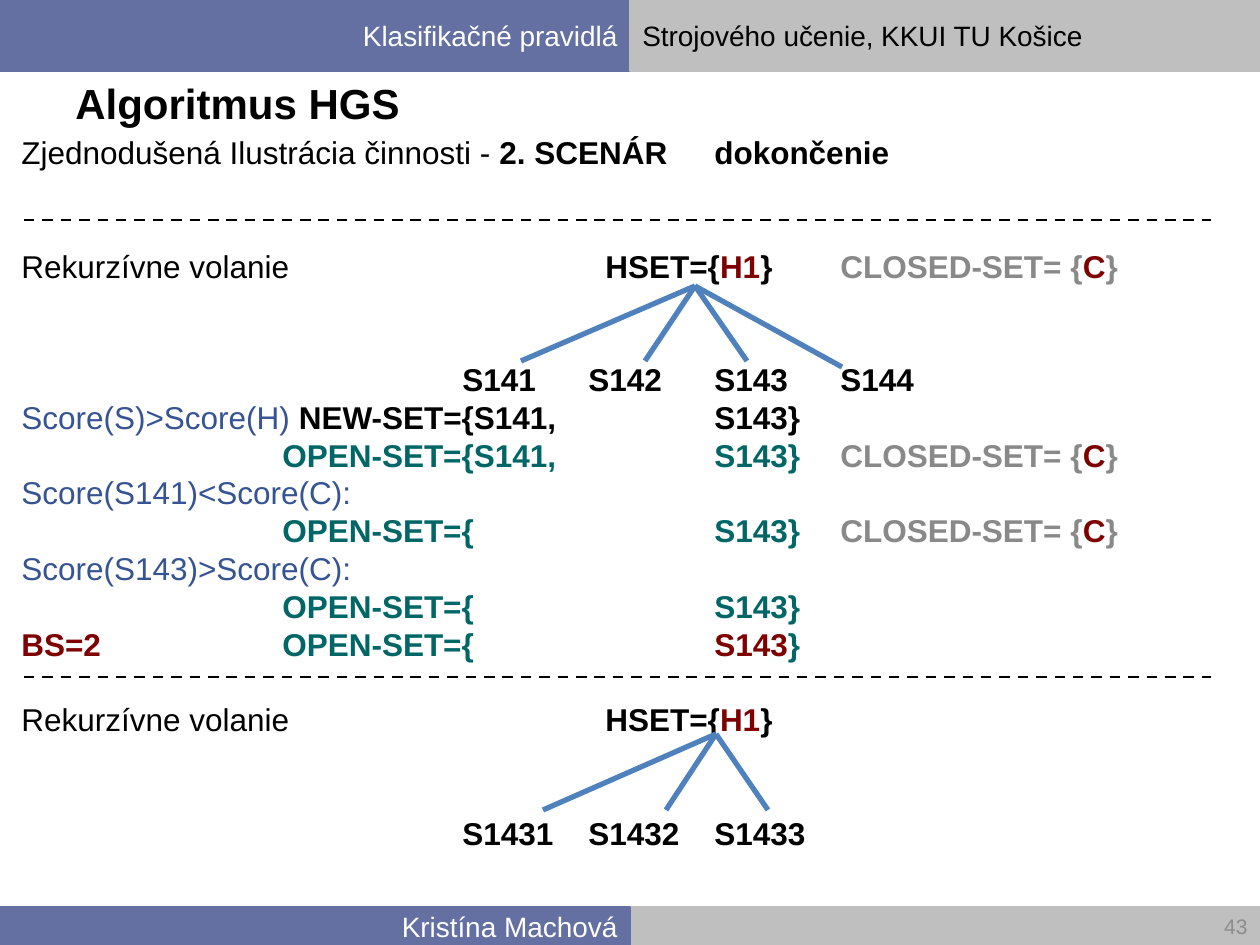
from lxml import etree
from pptx import Presentation
from pptx.dml.color import RGBColor
from pptx.enum.dml import MSO_LINE
from pptx.enum.shapes import MSO_CONNECTOR, MSO_SHAPE
from pptx.enum.text import MSO_ANCHOR, PP_ALIGN
from pptx.oxml.ns import qn
from pptx.util import Emu, Pt

LEFT, RIGHT = PP_ALIGN.LEFT, PP_ALIGN.RIGHT
TOP, MIDDLE = MSO_ANCHOR.TOP, MSO_ANCHOR.MIDDLE
RECTANGLE, STRAIGHT, DASH = MSO_SHAPE.RECTANGLE, MSO_CONNECTOR.STRAIGHT, MSO_LINE.DASH

WIDTH, HEIGHT = 1260, 945
EMU_PER_PX = 914400 / 126
FONT = "Arial"
LINE_PITCH = 21.6  # points
BLACK, WHITE, GRAY, PAGE_GRAY = "000000", "FFFFFF", "898989", "8C8C8C"
INDIGO, SILVER, EDGE_BLUE = "6570A2", "BFBFBF", "4F81BD"
RED, TEAL, SCORE_BLUE = "7E0000", "006666", "365394"

# left, top, width, height, fill, text, text colour, alignment
BARS = [
    (630, 907, 630, 38, SILVER, "", BLACK, LEFT),
    (0, 0, 630, 71, INDIGO, "Klasifikačné pravidlá", WHITE, RIGHT),
    (630, 0, 630, 71, SILVER, "Strojového učenie, KKUI TU Košice", BLACK, LEFT),
    (0, 907, 630, 38, INDIGO, "Kristína Machová", WHITE, RIGHT),
]

# Tab stops in px from the left edge of the text
SET_STOP, HSET_STOP = 261, 584
S1_STOP, S2_STOP, S3_STOP, S4_STOP = range(441, 820, 126)
SET_STOPS = [SET_STOP, S3_STOP, S4_STOP]
HSET_STOPS = [HSET_STOP, S4_STOP]
CHILD_STOPS = [S1_STOP, S2_STOP, S3_STOP, S4_STOP]

# Runs: text, colour, bold
CLOSED_SET = [("\tCLOSED-SET= {", GRAY, True), ("C", RED, True), ("}", GRAY, True)]
RECURSIVE_CALL = [("Rekurzívne volanie", BLACK, False), ("\tHSET={", BLACK, True),
                  ("H1", RED, True), ("}", BLACK, True)]
OPEN_SET = [("\tOPEN-SET={\tS143}", TEAL, True)]

# Rows: free lines above, tab stops, runs
ROWS = [
    (0, [S3_STOP], [("Zjednodušená Ilustrácia činnosti - ", BLACK, False),
                    ("2. SCENÁR\tdokončenie", BLACK, True)]),
    (2, HSET_STOPS, RECURSIVE_CALL + CLOSED_SET),
    (2, CHILD_STOPS, [("\tS141\tS142\tS143\tS144", BLACK, True)]),
    (0, [S3_STOP], [("Score(S)>Score(H) ", SCORE_BLUE, False),
                    ("NEW-SET={S141,\tS143}", BLACK, True)]),
    (0, SET_STOPS, [("\tOPEN-SET={S141,\tS143}", TEAL, True)] + CLOSED_SET),
    (0, [], [("Score(S141)<Score(C):", SCORE_BLUE, False)]),
    (0, SET_STOPS, OPEN_SET + CLOSED_SET),
    (0, [], [("Score(S143)>Score(C):", SCORE_BLUE, False)]),
    (0, SET_STOPS, OPEN_SET),
    (0, SET_STOPS, [("BS=2", RED, True), ("\tOPEN-SET={\t", TEAL, True),
                    ("S143", RED, True), ("}", TEAL, True)]),
    (1, HSET_STOPS, RECURSIVE_CALL),
    (2, CHILD_STOPS, [("\tS1431\tS1432\tS1433", BLACK, True)]),
]

DIVIDER_TOPS = [220, 677]
DIVIDER_LEFT, DIVIDER_RIGHT = 24, 1211
# Parent point and its child points
TREES = [
    ((695, 286), [(521, 361), (645, 361), (747, 361), (842, 367)]),
    ((716, 734), [(543, 810), (666, 810), (768, 810)]),
]


def px(value):
    return Emu(round(value * EMU_PER_PX))


def rgb(color):
    return RGBColor.from_string(color)


def add_run(paragraph, text, size=18, color=BLACK, bold=False):
    run = paragraph.add_run()
    run.text = text
    run.font.name, run.font.size, run.font.bold = FONT, Pt(size), bold
    run.font.color.rgb = rgb(color)


def add_text_box(slide, left, top, width, height, anchor=MIDDLE):
    frame = slide.shapes.add_textbox(px(left), px(top), px(width), px(height)).text_frame
    frame.word_wrap = True
    frame.vertical_anchor = anchor
    return frame


def write_text(frame, text, align=LEFT, **font):
    paragraph = frame.paragraphs[0]
    paragraph.alignment = align
    add_run(paragraph, text, **font)


def add_bar(slide, left, top, width, height, fill, text, color, align):
    bar = slide.shapes.add_shape(RECTANGLE, px(left), px(top), px(width), px(height))
    bar.shadow.inherit = False
    bar.fill.solid()
    bar.fill.fore_color.rgb = rgb(fill)
    bar.line.color.rgb = rgb(fill)
    bar.line.width = Pt(0.75)
    if text:
        bar.text_frame.vertical_anchor = MIDDLE
        write_text(bar.text_frame, text, align=align, size=16, color=color)


def add_line(slide, start, end, color, width, dash=None):
    line = slide.shapes.add_connector(STRAIGHT, *map(px, start + end))
    line.line.color.rgb = rgb(color)
    line.line.width = Pt(width)
    if dash:
        line.line.dash_style = dash
    etree.SubElement(line._element.spPr, qn("a:effectLst"))


def set_tab_stops(paragraph, stops):
    tab_list = etree.SubElement(paragraph._p.get_or_add_pPr(), qn("a:tabLst"))
    for stop in stops:
        etree.SubElement(tab_list, qn("a:tab"), pos=str(px(stop)), algn="l")


def add_rows(frame, rows):
    for index, (free_lines, stops, runs) in enumerate(rows):
        paragraph = frame.add_paragraph() if index else frame.paragraphs[0]
        paragraph.line_spacing = Pt(LINE_PITCH)
        paragraph.space_before = Pt(free_lines * LINE_PITCH)
        if stops:
            set_tab_stops(paragraph, stops)
        for text, color, bold in runs:
            add_run(paragraph, text, color=color, bold=bold)


def main():
    presentation = Presentation()
    presentation.slide_width, presentation.slide_height = px(WIDTH), px(HEIGHT)
    slide = presentation.slides.add_slide(presentation.slide_layouts[6])

    for bar in BARS:
        add_bar(slide, *bar)
    write_text(add_text_box(slide, 63, 71, 1134, 63), "Algoritmus HGS", size=24, bold=True)
    write_text(add_text_box(slide, 829, 907, 431, 38), "43",
               align=RIGHT, size=12, color=PAGE_GRAY)
    add_rows(add_text_box(slide, 9, 127, 1244, 814, anchor=TOP), ROWS)

    for top in DIVIDER_TOPS:
        add_line(slide, (DIVIDER_LEFT, top), (DIVIDER_RIGHT, top), BLACK, 1.5, dash=DASH)
    for parent, children in TREES:
        for child in children:
            add_line(slide, parent, child, EDGE_BLUE, 3)

    presentation.save("out.pptx")


if __name__ == "__main__":
    main()
